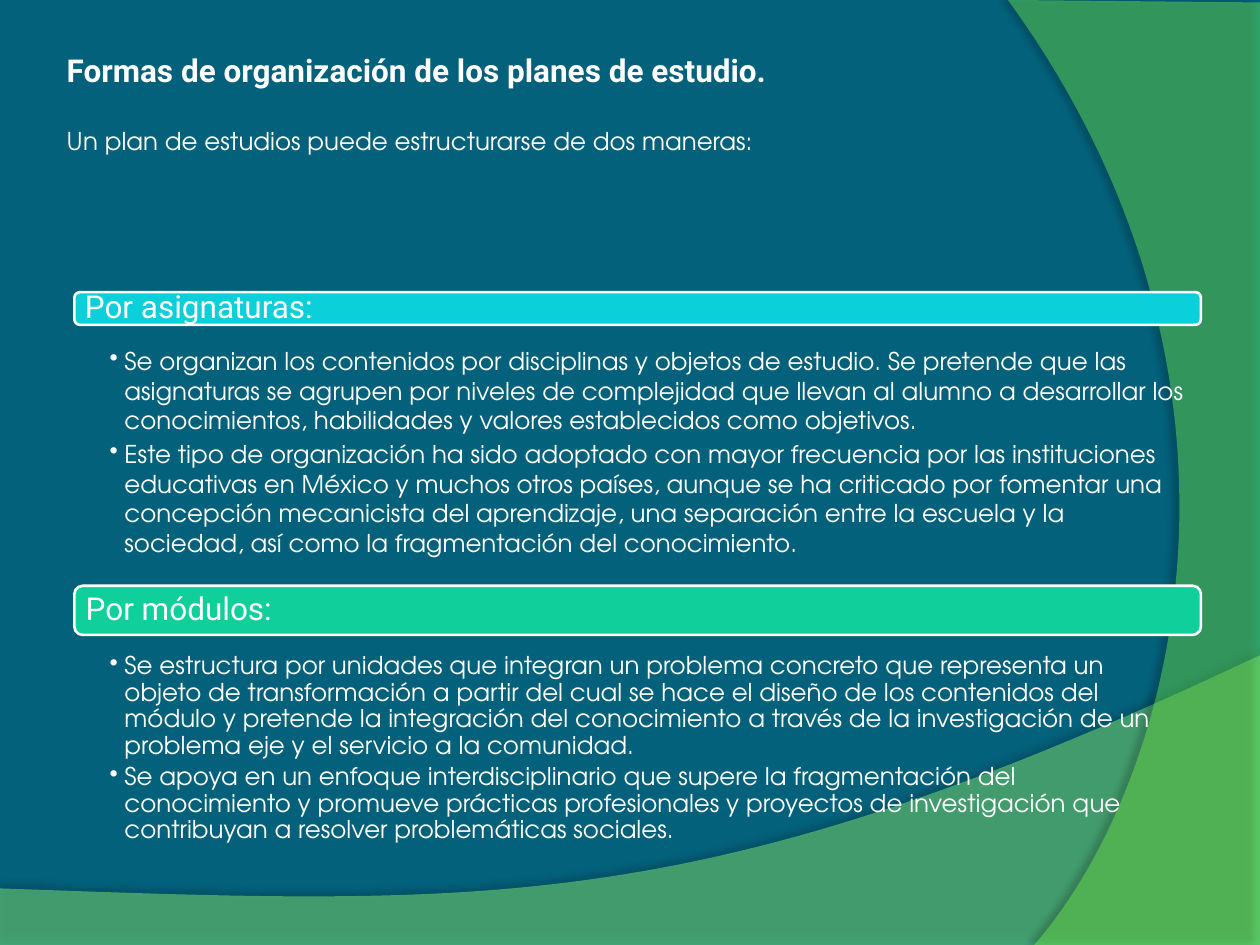
from lxml.etree import SubElement
from pptx import Presentation
from pptx.dml.color import RGBColor
from pptx.enum.shapes import MSO_SHAPE
from pptx.enum.text import MSO_ANCHOR, MSO_AUTO_SIZE, PP_ALIGN
from pptx.oxml.ns import qn
from pptx.util import Cm, Pt

COLORS = {"background": "04617B", "text": "FFFFFF", "low_wave": "8FF774",
          "side_wave": "77FF50", "subjects": "0BD0D9", "modules": "10CF9B",
          "shadow": "000000"}
HEADING_FONT, BODY_FONT = "Roboto", "TeX Gyre Adventor"
LEFT, WIDTH = Cm(1.5), Cm(22.71)


def add_span(para, text, font, size, bold=False):
    span = para.add_run()
    span.text = text
    span.font.name = font
    span.font.size = Pt(size)
    span.font.bold = bold
    span.font.color.rgb = RGBColor.from_string(COLORS["text"])


def set_margins(frame, left, top, right, bottom):
    frame.margin_left, frame.margin_top = Cm(left), Cm(top)
    frame.margin_right, frame.margin_bottom = Cm(right), Cm(bottom)


deck = Presentation()
deck.slide_width, deck.slide_height = Cm(25.4), Cm(19.05)
page = deck.slides.add_slide(deck.slide_layouts[5])
page.background.fill.solid()
page.background.fill.fore_color.rgb = RGBColor.from_string(COLORS["background"])

waves = [
    ("low_wave", [(0, 17.91), (0, 19.05), (25.4, 19.05)],
     [(25.4, 13.21), (14.2, 18.52), (9.93, 18.26), (0, 17.91)], 45, 35, 3.5, 270),
    ("side_wave", [(25.4, 0.05), (25.4, 19.05)],
     [(20.85, 19.05), (23.75, 15.72), (25.86, 7.62), (20.32, 0)], 40, 45, 4, 180),
]
STEPS = 60
for color, corners, curve, opacity, shadow_opacity, distance, angle in waves:
    points = list(corners)
    for step in range(STEPS + 1):
        t = step / STEPS
        weights = ((1 - t) ** 3, 3 * t * (1 - t) ** 2, 3 * t ** 2 * (1 - t), t ** 3)
        points.append(tuple(sum(w * point[axis] for w, point in zip(weights, curve))
                            for axis in (0, 1)))
    outline = [(Cm(x), Cm(y)) for x, y in points]
    builder = page.shapes.build_freeform(*outline[0])
    builder.add_line_segments(outline[1:], close=True)
    wave = builder.convert_to_shape()
    wave.shadow.inherit = False
    wave.line.fill.background()
    wave.fill.solid()
    wave.fill.fore_color.rgb = RGBColor.from_string(COLORS[color])
    fill_color = wave.element.find(".//" + qn("a:srgbClr"))
    SubElement(fill_color, qn("a:alpha"), val=str(opacity * 1000))
    effects = wave.element.find(".//" + qn("a:effectLst"))
    shadow = SubElement(effects, qn("a:outerShdw"), blurRad=str(Pt(4)),
                        dist=str(Pt(distance)), dir=str(angle * 60000),
                        algn="ctr", rotWithShape="0")
    shadow_color = SubElement(shadow, qn("a:srgbClr"), val=COLORS["shadow"])
    SubElement(shadow_color, qn("a:alpha"), val=str(shadow_opacity * 1000))

title = page.shapes.title
title.element.getparent().append(title.element)
title.left, title.top, title.width, title.height = Cm(1.09), Cm(0.91), Cm(18.8), Cm(2.39)
frame = title.text_frame
frame.word_wrap = True
frame.auto_size = MSO_AUTO_SIZE.NONE
frame.vertical_anchor = MSO_ANCHOR.TOP
para = frame.paragraphs[0]
para.alignment = PP_ALIGN.LEFT
add_span(para, "Formas de organización de los planes de estudio.", HEADING_FONT, 18, True)
para = frame.add_paragraph()
para.alignment = PP_ALIGN.LEFT
para.space_before = Pt(21)
add_span(para, "Un plan de estudios puede estructurarse de dos maneras:", BODY_FONT, 14)

sections = [
    ("Por asignaturas:", "subjects", 5.89, 0.66, 6.93, 5.23, 1.0, [
        "Se organizan los contenidos por disciplinas y objetos de estudio. Se pretende "
        "que las asignaturas se agrupen por niveles de complejidad que llevan al alumno a "
        "desarrollar los conocimientos, habilidades y valores establecidos como objetivos.",
        "Este tipo de organización ha sido adoptado con mayor frecuencia por las "
        "instituciones educativas en México y muchos otros países, aunque se ha criticado "
        "por fomentar una concepción mecanicista del aprendizaje, una separación entre la "
        "escuela y la sociedad, así como la fragmentación del conocimiento."]),
    ("Por módulos:", "modules", 11.81, 0.99, 13.13, 4.04, 0.9, [
        "Se estructura por unidades que integran un problema concreto que representa un "
        "objeto de transformación a partir del cual se hace el diseño de los contenidos "
        "del módulo y pretende la integración del conocimiento a través de la "
        "investigación de un problema eje y el servicio a la comunidad.",
        "Se apoya en un enfoque interdisciplinario que supere la fragmentación del "
        "conocimiento y promueve prácticas profesionales y proyectos de investigación que "
        "contribuyan a resolver problemáticas sociales."]),
]
for heading, color, bar_top, bar_height, box_top, box_height, spacing, items in sections:
    bar = page.shapes.add_shape(MSO_SHAPE.ROUNDED_RECTANGLE, LEFT, Cm(bar_top),
                                WIDTH, Cm(bar_height))
    bar.shadow.inherit = False
    bar.fill.solid()
    bar.fill.fore_color.rgb = RGBColor.from_string(COLORS[color])
    bar.line.color.rgb = RGBColor.from_string(COLORS["text"])
    bar.line.width = Pt(1.5)
    frame = bar.text_frame
    frame.word_wrap = True
    frame.vertical_anchor = MSO_ANCHOR.MIDDLE
    set_margins(frame, 0.18, 0.18, 0.18, 0.18)
    para = frame.paragraphs[0]
    para.alignment = PP_ALIGN.LEFT
    para.line_spacing = 0.9
    add_span(para, heading, HEADING_FONT, 18)

    box = page.shapes.add_textbox(LEFT, Cm(box_top), WIDTH, Cm(box_height))
    frame = box.text_frame
    frame.word_wrap = True
    set_margins(frame, 0.71, 0.05, 0.28, 0.05)
    for index, item in enumerate(items):
        para = frame.add_paragraph() if index else frame.paragraphs[0]
        para.level = 1
        para.line_spacing = spacing
        para.space_after = Pt(2.8)
        properties = para._p.get_or_add_pPr()
        properties.set("marL", str(Cm(0.3)))
        properties.set("indent", str(-Cm(0.3)))
        SubElement(properties, qn("a:buChar"), char="•")
        add_span(para, item, BODY_FONT, 14)

deck.save("out.pptx")
